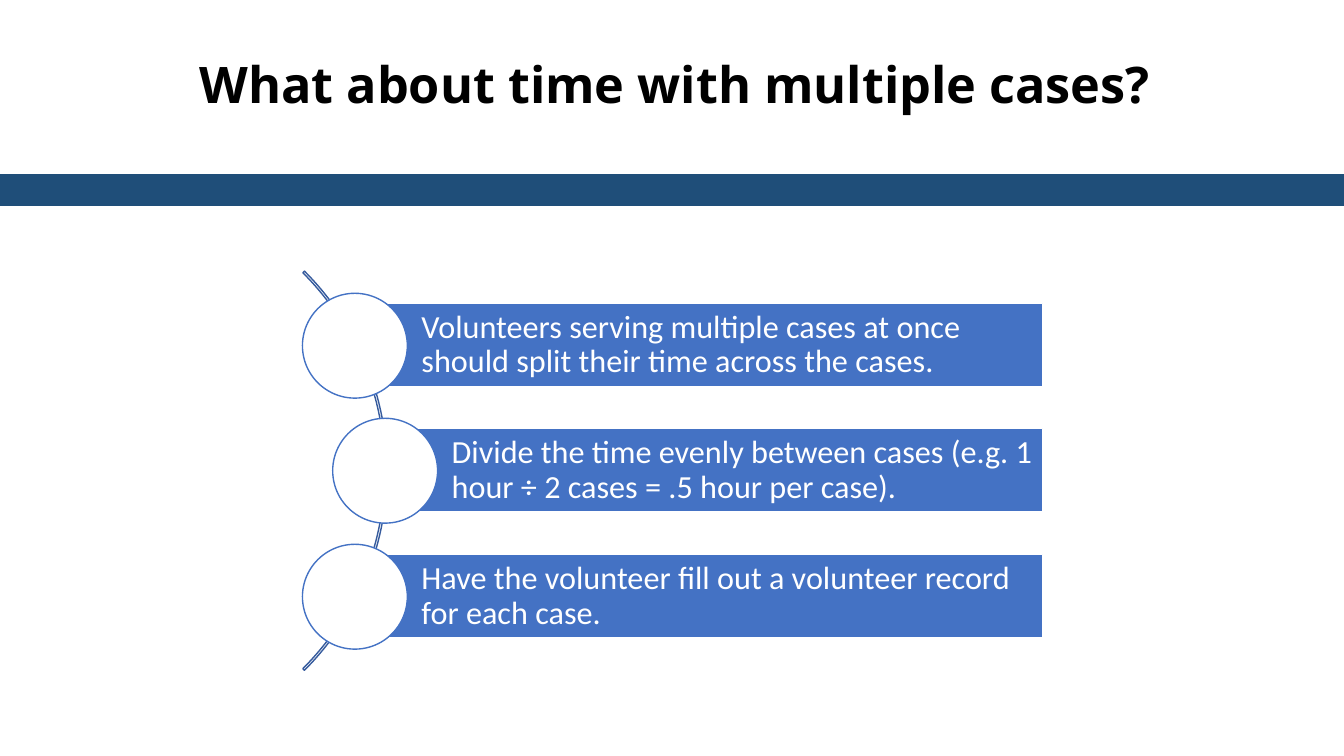
from pptx import Presentation
from pptx.dml.color import RGBColor
from pptx.enum.shapes import MSO_SHAPE as Preset
from pptx.enum.text import MSO_ANCHOR as Anchor, MSO_AUTO_SIZE as AutoSize, PP_ALIGN as Align
from pptx.util import Emu, Pt

EMU_PER_PX = 9144  # 100 px to the inch
COLORS = {
    "white": "FFFFFF",
    "black": "000000",
    "navy": "1F4E79",
    "blue": "4472C4",
    "arc": "365B9D",
}
STEPS = [
    ("Volunteers serving multiple cases at once should split their time across the cases.", 300),
    ("Divide the time evenly between cases (e.g. 1 hour ÷ 2 cases = .5 hour per case).", 330),
    ("Have the volunteer fill out a volunteer record for each case.", 300),
]
CIRCLE = 104
FIRST_CIRCLE_TOP, LAST_CIRCLE_TOP = 291, 540
BAR_HEIGHT, BAR_RIGHT = 83, 1034


def px(length):
    return Emu(length * EMU_PER_PX)


def color(name):
    return RGBColor.from_string(COLORS[name])


def write(shape, text, *, size, font, ink, bold=False, align=Align.LEFT,
          spacing=1.0, insets=(10, 5, 10, 5), auto_size=AutoSize.NONE):
    """Put one formatted paragraph in a shape; insets run left, top, right, bottom."""
    frame = shape.text_frame
    frame.word_wrap = True
    frame.auto_size = auto_size
    frame.vertical_anchor = Anchor.MIDDLE
    (frame.margin_left, frame.margin_top,
     frame.margin_right, frame.margin_bottom) = map(px, insets)
    paragraph = frame.paragraphs[0]
    paragraph.alignment = align
    paragraph.line_spacing = spacing
    run = paragraph.add_run()
    run.text = text
    run.font.size = Pt(size)
    run.font.name = font
    run.font.bold = bold
    run.font.color.rgb = color(ink)


class TimeSlide:
    heading_font = "Open Sans"
    body_font = "Calibri"

    def __init__(self, deck):
        self.slide = deck.slides.add_slide(deck.slide_layouts[5])

    def title(self, text, left, top, width, height):
        heading = self.slide.shapes.title
        heading.left, heading.top, heading.width, heading.height = map(
            px, (left, top, width, height))
        write(heading, text, size=36, font=self.heading_font, ink="black",
              bold=True, align=Align.CENTER, auto_size=AutoSize.SHAPE_TO_FIT_TEXT)

    def shape(self, preset, left, top, width, height, *, line, fill=None):
        shape = self.slide.shapes.add_shape(preset, *map(px, (left, top, width, height)))
        shape.shadow.inherit = False
        if fill:
            shape.fill.solid()
            shape.fill.fore_color.rgb = color(fill)
        else:
            shape.fill.background()
        shape.line.color.rgb = color(line)
        shape.line.width = Pt(1)
        return shape

    def arc(self, left, top, size):
        arc = self.shape(Preset.BLOCK_ARC, left, top, size, size, line="arc")
        for index, value in enumerate((189, 27, 0.004)):
            arc.adjustments[index] = value

    def step(self, text, left, top):
        """Draw a text bar that starts behind the middle of its circle."""
        bar_left = left + CIRCLE // 2
        bar_top = top + (CIRCLE - BAR_HEIGHT) // 2
        bar = self.shape(Preset.RECTANGLE, bar_left, bar_top, BAR_RIGHT - bar_left,
                         BAR_HEIGHT, line="white", fill="blue")
        write(bar, text, size=23, font=self.body_font, ink="white",
              spacing=0.9, insets=(66, 6, 6, 6))
        self.shape(Preset.OVAL, left, top, CIRCLE, CIRCLE, line="blue", fill="white")


def main():
    deck = Presentation()
    deck.slide_width, deck.slide_height = px(1333), px(750)
    page = TimeSlide(deck)
    page.title("What about time with multiple cases?", 58, 47, 1223, 71)
    page.shape(Preset.RECTANGLE, 0, 173, 1333, 31, line="navy", fill="navy")
    page.arc(-176, 187, 560)
    span = LAST_CIRCLE_TOP - FIRST_CIRCLE_TOP
    for index, (text, left) in enumerate(STEPS):
        page.step(text, left, FIRST_CIRCLE_TOP + index * span // (len(STEPS) - 1))
    deck.save("out.pptx")


if __name__ == "__main__":
    main()
